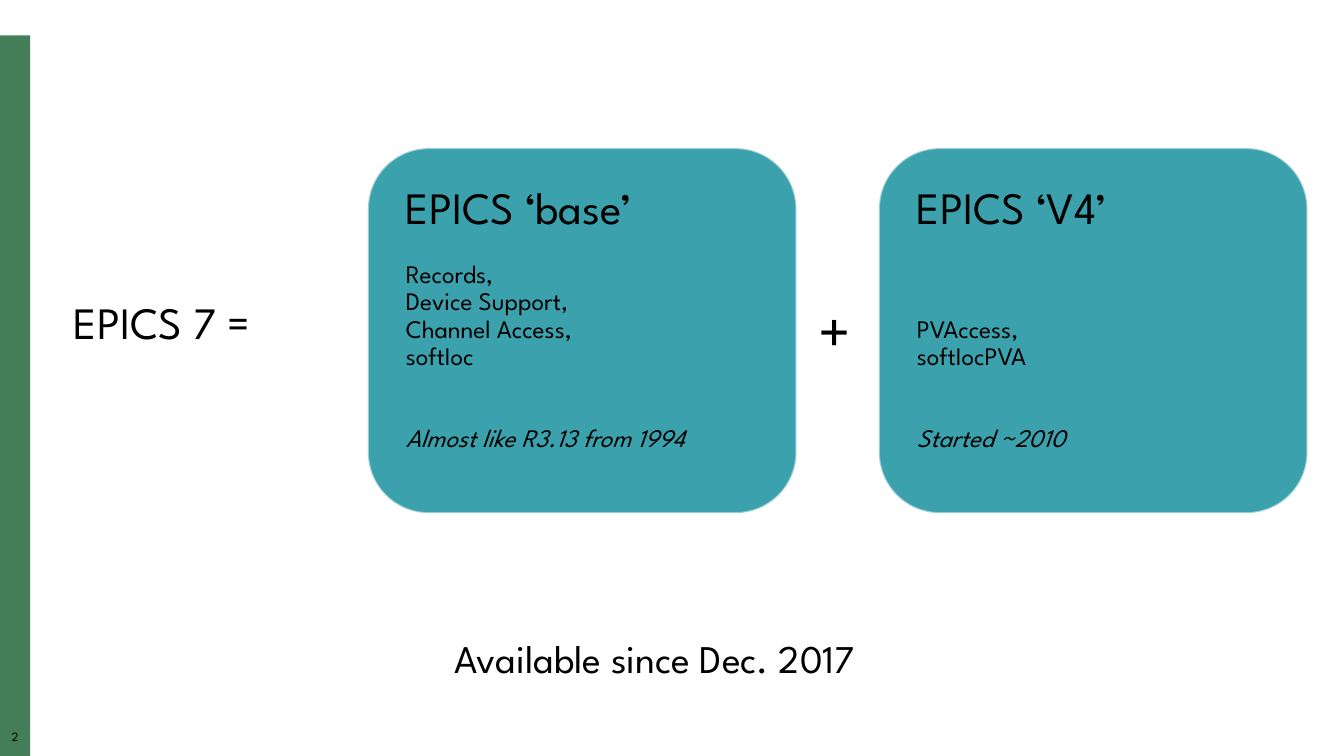
import pptx
import pptx.util
import pptx.dml.color
import pptx.enum.shapes
import pptx.enum.text
import pptx.oxml
import pptx.oxml.ns

SLIDE_WIDTH = pptx.util.Inches(13.33)
SLIDE_HEIGHT = pptx.util.Inches(7.5)
GRID = 100  # columns and rows
FONT = "League Spartan"
COLORS = {"band": "447E59", "card": "3BA2AD", "edge": "F9F9F9", "text": "000000"}
SIZES = {"heading": 32, "footer": 28, "detail": 18, "plus": 44, "number": 9}
DETAIL_LINE = 19.5  # points from one detail line to the next
CARDS = [
    {"heading": "EPICS ‘base’",
     "details": ["Records,\vDevice Support,", "Channel Access,\vsoftIoc"],
     "gap_lines": 1, "remark": "Almost like R3.13 from 1994"},
    {"heading": "EPICS ‘V4’",
     "details": ["PVAccess,", "softIocPVA"],
     "gap_lines": 3, "remark": "Started ~2010"},
]


def color(name):
    return pptx.dml.color.RGBColor.from_string(COLORS[name])


def place(box):
    """Turn a box in grid columns and rows into slide lengths."""
    left, top, width, height = box
    return [round(SLIDE_WIDTH * left / GRID), round(SLIDE_HEIGHT * top / GRID),
            round(SLIDE_WIDTH * width / GRID), round(SLIDE_HEIGHT * height / GRID)]


def set_all(target, values):
    for name, value in values.items():
        setattr(target, name, value)


def write(paragraph, text, size, italic=None, before=0,
          align=pptx.enum.text.PP_ALIGN.LEFT):
    paragraph.text = text
    set_all(paragraph, {"alignment": align, "line_spacing": 0.9,
                        "space_before": pptx.util.Pt(before)})
    for run in paragraph.runs:
        set_all(run.font, {"name": FONT, "size": pptx.util.Pt(SIZES[size]),
                           "italic": italic})
        run.font.color.rgb = color("text")


def set_frame(frame, inset=None):
    set_all(frame, {"word_wrap": True,
                    "vertical_anchor": pptx.enum.text.MSO_ANCHOR.TOP})
    if inset is not None:
        sides = ("margin_left", "margin_top", "margin_right", "margin_bottom")
        set_all(frame, dict.fromkeys(sides, pptx.util.Inches(inset)))


def label(slide, box, text, size, inset=None, align=pptx.enum.text.PP_ALIGN.LEFT):
    frame = slide.shapes.add_textbox(*place(box)).text_frame
    set_frame(frame, inset)
    write(frame.paragraphs[0], text, size, align=align)


def filled(slide, kind, box, fill):
    shape = slide.shapes.add_shape(kind, *place(box))
    shape.shadow.inherit = False
    shape.fill.solid()
    shape.fill.fore_color.rgb = color(fill)
    return shape


def side_band(slide, box):
    left, top, width, height = box
    band = filled(slide, pptx.enum.shapes.MSO_SHAPE.RECTANGLE, box, "band")
    band.line.fill.background()
    number_box = (left, top + height - 3.33, width, 2.27)
    label(slide, number_box, "2", "number", inset=0,
          align=pptx.enum.text.PP_ALIGN.CENTER)


def title(slide, box):
    heading = slide.shapes.title
    position = dict(zip(("left", "top", "width", "height"), place(box)))
    set_all(heading, position)
    set_all(heading.text_frame, {
        "word_wrap": True, "vertical_anchor": pptx.enum.text.MSO_ANCHOR.MIDDLE,
        "auto_size": pptx.enum.text.MSO_AUTO_SIZE.SHAPE_TO_FIT_TEXT})
    write(heading.text_frame.paragraphs[0], "EPICS 7 =", "heading")


def card(slide, box, content):
    shape = filled(slide, pptx.enum.shapes.MSO_SHAPE.ROUNDED_RECTANGLE, box, "card")
    shape.line.width = pptx.util.Pt(1.35)
    shape.line.color.rgb = color("edge")
    edge = shape.line._get_or_add_ln().find(".//" + pptx.oxml.ns.qn("a:srgbClr"))
    edge.append(pptx.oxml.parse_xml(
        f'<a:alpha {pptx.oxml.ns.nsdecls("a")} val="50000"/>'))

    frame = shape.text_frame
    set_frame(frame, inset=0.2)
    write(frame.paragraphs[0], content["heading"], "heading")
    for index, detail in enumerate(content["details"]):
        before = 0 if index else content["gap_lines"] * DETAIL_LINE
        write(frame.add_paragraph(), detail, "detail", before=before)
    write(frame.add_paragraph(), content["remark"], "detail", italic=True,
          before=2 * DETAIL_LINE)


def sum_of_parts(slide, box):
    left, top, width, height = box
    card_width = 31.88
    step = width - card_width
    for index, content in enumerate(CARDS):
        card(slide, (left + index * step, top, card_width, height), content)
    plus_box = (left + card_width + 0.89, top + 19.47, 3.53, 9.47)
    label(slide, plus_box, "+", "plus")


def main():
    deck = pptx.Presentation()
    set_all(deck, {"slide_width": SLIDE_WIDTH, "slide_height": SLIDE_HEIGHT})
    slide = deck.slides.add_slide(deck.slide_layouts.get_by_name("Title Only"))
    side_band(slide, (0, 4.67, 2.25, 95.33))
    title(slide, (4.73, 39.07, 17.78, 7.87))
    label(slide, (33.08, 84, 38.25, 9.47), "Available since Dec. 2017", "footer")
    sum_of_parts(slide, (27.38, 19.6, 69.9, 48.27))
    deck.save("out.pptx")


if __name__ == "__main__":
    main()
